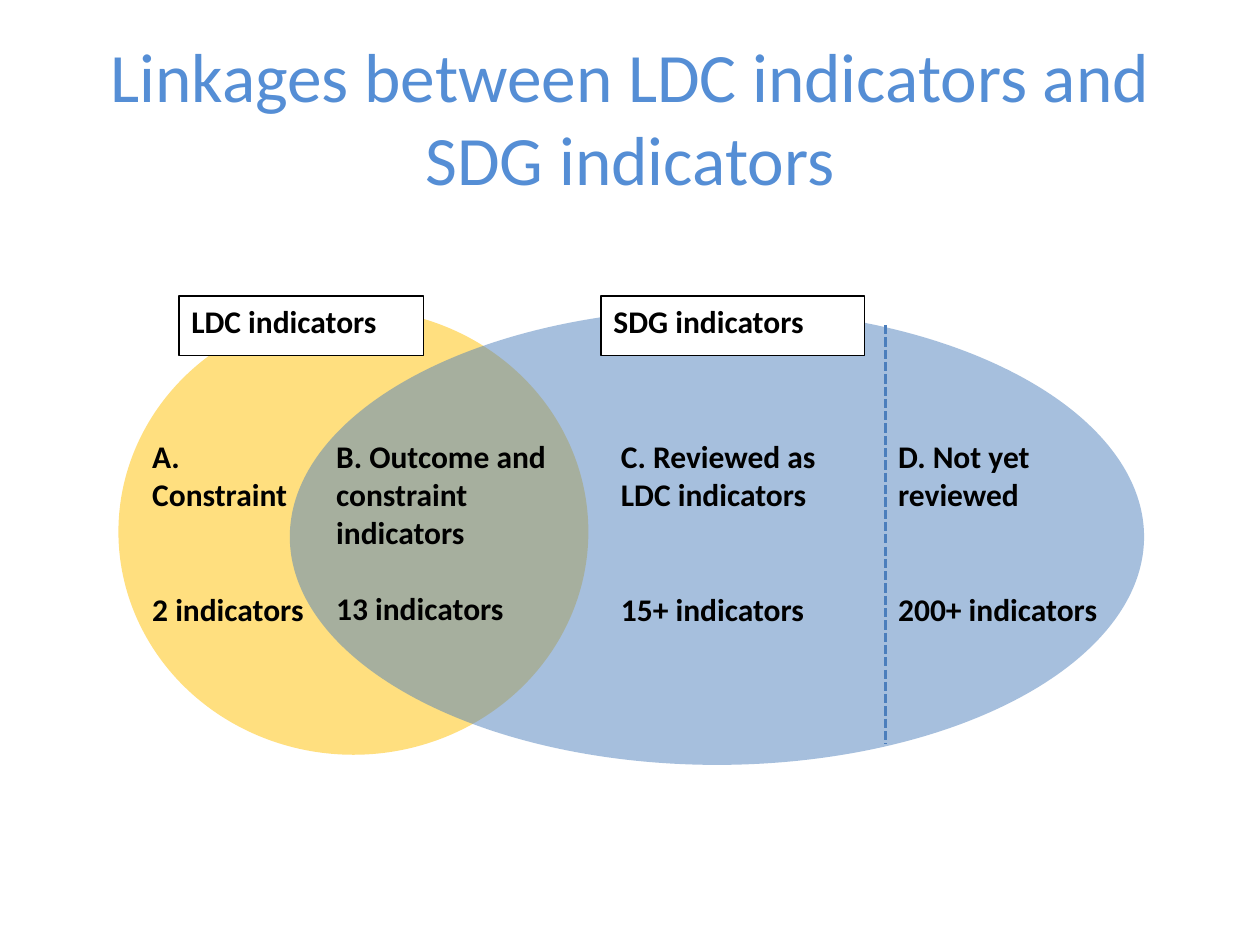
from dataclasses import dataclass
from typing import NamedTuple

from lxml import etree
from pptx import Presentation
from pptx import util as u
from pptx.dml.color import RGBColor
from pptx.enum import dml, shapes, text
from pptx.oxml.ns import qn


@dataclass(frozen=True)
class Theme:
    font: str = "Calibri"
    title_size: float = 39.6
    body_size: float = 18
    line_height: float = 22
    title: str = "558ED5"
    ink: str = "000000"
    paper: str = "FFFFFF"
    ldc: str = "FFC000"
    sdg: str = "4F81BD"
    divider: str = "4B7EBC"
    opacity: int = 50


class Box(NamedTuple):
    """Left, top, width and height in percent of the slide."""
    x: float
    y: float
    w: float
    h: float


class Region(NamedTuple):
    x: float
    w: float
    h: float
    name: str
    count: str
    gap_lines: int


class Label(NamedTuple):
    x: float
    w: float
    text: str


THEME = Theme()
WIDTH, HEIGHT = u.Inches(10), u.Inches(7.5)
REGION_TOP = 45.6
LABEL_TOP, LABEL_HEIGHT = 31.33, 6.27
DIVIDER_X, DIVIDER_TOP, DIVIDER_BOTTOM = 70.3, 34.4, 78.67

SETS = [
    (Box(9.4, 32.67, 37.3, 47.2), THEME.ldc),
    (Box(23, 32.67, 67.8, 48.27), THEME.sdg),
]
REGIONS = [
    Region(11.1, 14.7, 22.13, "A. Constraint", "2 indicators", 2),
    Region(25.7, 19.3, 21.07, "B. Outcome and constraint indicators", "13 indicators", 1),
    Region(48.3, 20.3, 20, "C. Reviewed as LDC indicators", "15+ indicators", 2),
    Region(DIVIDER_X, 18.6, 22.27, "D. Not yet reviewed", "200+ indicators", 2),
]
LABELS = [Label(14.2, 19.4, "LDC indicators"), Label(47.7, 20.9, "SDG indicators")]


def across(share: float) -> int:
    return round(WIDTH * share / 100)


def down(share: float) -> int:
    return round(HEIGHT * share / 100)


def place(box: Box) -> tuple[int, int, int, int]:
    return across(box.x), down(box.y), across(box.w), down(box.h)


def format_text(p, size: float, color: str, bold: bool, align) -> None:
    p.alignment = align
    for r in p.runs:
        r.font.name = THEME.font
        r.font.size = u.Pt(size)
        r.font.bold = bold
        r.font.color.rgb = RGBColor.from_string(color)


def write_body(sp, content: str) -> None:
    tf = sp.text_frame
    tf.word_wrap = True
    tf.vertical_anchor = text.MSO_ANCHOR.TOP
    tf.text = content
    for p in tf.paragraphs:
        format_text(p, THEME.body_size, THEME.ink, True, text.PP_ALIGN.LEFT)


def add_filled(s, kind, box: Box, color: str):
    sp = s.shapes.add_shape(kind, *place(box))
    sp.shadow.inherit = False
    sp.fill.solid()
    sp.fill.fore_color.rgb = RGBColor.from_string(color)
    return sp


def add_set(s, box: Box, color: str) -> None:
    sp = add_filled(s, shapes.MSO_SHAPE.OVAL, box, color)
    sp.line.fill.background()
    clr = sp.fill._xPr.find(qn("a:solidFill"))[0]
    etree.SubElement(clr, qn("a:alpha")).set("val", str(THEME.opacity * 1000))


def add_divider(s) -> None:
    x = across(DIVIDER_X)
    line = s.shapes.add_connector(shapes.MSO_CONNECTOR.STRAIGHT,
                                  x, down(DIVIDER_TOP), x, down(DIVIDER_BOTTOM))
    line.line.color.rgb = RGBColor.from_string(THEME.divider)
    line.line.width = u.Pt(1.75)
    line.line.dash_style = dml.MSO_LINE.SQUARE_DOT
    etree.SubElement(line._element.spPr, qn("a:effectLst"))


def add_region(s, region: Region) -> None:
    box = Box(region.x, REGION_TOP, region.w, region.h)
    sp = s.shapes.add_textbox(*place(box))
    write_body(sp, f"{region.name}\n{region.count}")
    gap = region.gap_lines * THEME.line_height
    sp.text_frame.paragraphs[1].space_before = u.Pt(gap)


def add_label(s, label: Label) -> None:
    box = Box(label.x, LABEL_TOP, label.w, LABEL_HEIGHT)
    sp = add_filled(s, shapes.MSO_SHAPE.RECTANGLE, box, THEME.paper)
    sp.line.color.rgb = RGBColor.from_string(THEME.ink)
    sp.line.width = u.Pt(0.75)
    write_body(sp, label.text)


def set_title(s, content: str) -> None:
    sp = s.shapes.title
    sp.left, sp.top, sp.width, sp.height = place(Box(5, 4, 90, 16.67))
    tf = sp.text_frame
    tf.text = content
    tf.word_wrap = True
    tf.auto_size = text.MSO_AUTO_SIZE.NONE
    tf.vertical_anchor = text.MSO_ANCHOR.MIDDLE
    format_text(tf.paragraphs[0], THEME.title_size, THEME.title, False,
                text.PP_ALIGN.CENTER)


def main() -> None:
    prs = Presentation()
    prs.slide_width, prs.slide_height = WIDTH, HEIGHT
    s = prs.slides.add_slide(prs.slide_layouts[5])  # title only
    set_title(s, "Linkages between LDC indicators and SDG indicators")

    # Overlapping sets and the reviewed / not reviewed divider
    for box, color in SETS:
        add_set(s, box, color)
    add_divider(s)

    # Texts inside the sets, then the set names on their upper edges
    for region in REGIONS:
        add_region(s, region)
    for label in LABELS:
        add_label(s, label)

    prs.save("out.pptx")


if __name__ == "__main__":
    main()
